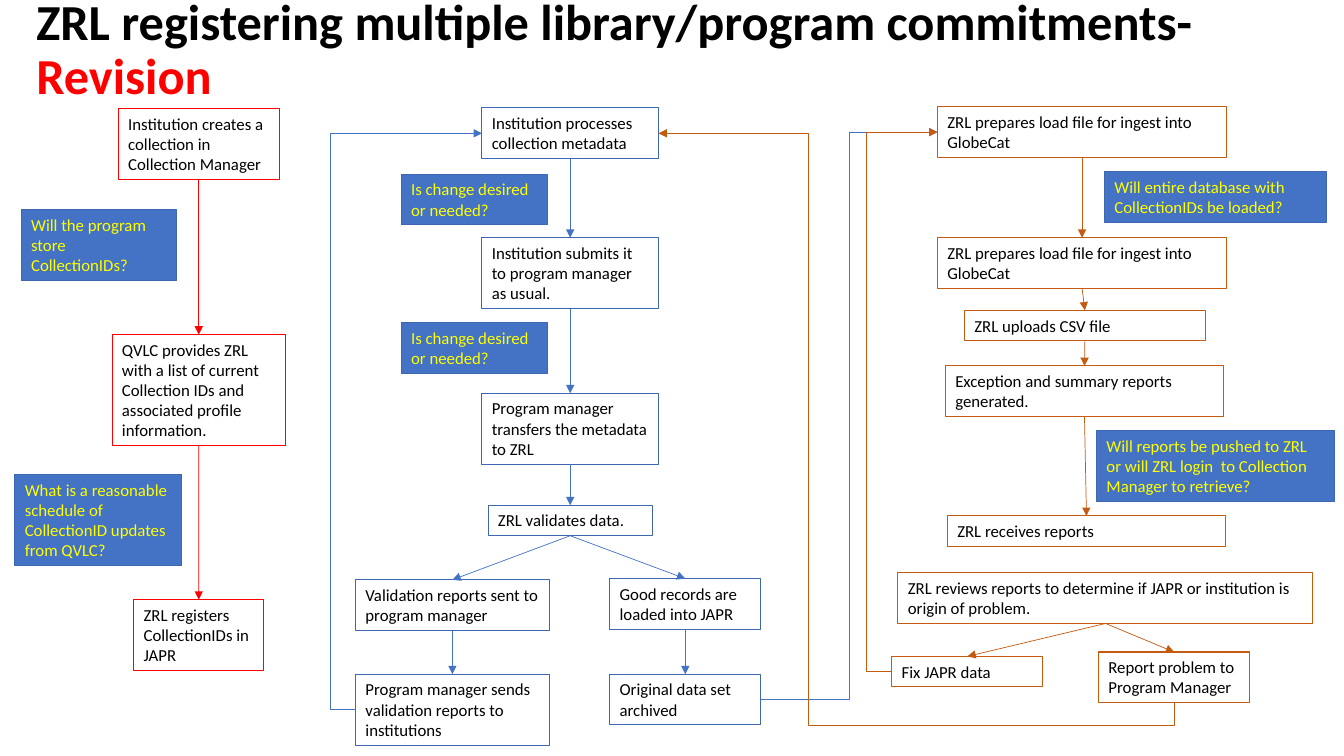
from pptx import Presentation
from pptx.dml.color import RGBColor
from pptx.enum.shapes import MSO_CONNECTOR, MSO_SHAPE
from pptx.enum.text import MSO_ANCHOR, MSO_AUTO_SIZE, PP_ALIGN
from pptx.oxml.ns import qn
from pptx.util import Cm, Pt
from lxml.etree import SubElement

FONT = "Calibri"
COLORS = {
    "black": "000000", "red": "FF0000", "yellow": "FFFF00", "border": "3E67B2",
    "blue": "4472C4", "orange": "C55A11",
}
TOP, LEFT, BOTTOM, RIGHT = range(4)

# Steps by line colour: name -> (centre x, top, width in cm, text lines, text)
STEPS = {
    "red": {
        "create": (5.01, 2.74, 4.06, 3, "Institution creates a collection in Collection Manager"),
        "provide": (5.01, 8.43, 4.37, 5, "QVLC provides ZRL with a list of current Collection IDs "
                    "and associated profile information."),
        "register": (5.01, 15.11, 3.28, 3, "ZRL registers CollectionIDs in JAPR"),
    },
    "border": {
        "process": (14.37, 2.72, 4.45, 2, "Institution processes collection metadata"),
        "submit": (14.37, 5.99, 4.45, 3, "Institution submits it to program manager as usual."),
        "transfer": (14.37, 9.91, 4.45, 3, "Program manager transfers the metadata to ZRL"),
        "validate": (14.37, 12.73, 4.14, 1, "ZRL validates data."),
        "reports sent": (11.4, 14.61, 4.88, 2, "Validation reports sent to program manager"),
        "good records": (17.27, 14.58, 3.81, 2, "Good records are loaded into JAPR"),
        "archive": (17.27, 16.99, 3.81, 2, "Original data set archived"),
        "return reports": (11.4, 16.99, 4.88, 3,
                           "Program manager sends validation reports to institutions"),
    },
    "orange": {
        "prepare": (27.27, 2.69, 7.29, 2, "ZRL prepares load file for ingest into GlobeCat"),
        "prepare again": (27.27, 5.99, 7.29, 2, "ZRL prepares load file for ingest into GlobeCat"),
        "upload": (27.34, 7.82, 6.07, 1, "ZRL uploads CSV file"),
        "summary": (27.33, 9.22, 7.01, 2, "Exception and summary reports generated."),
        "receive": (27.38, 13, 7.01, 1, "ZRL receives reports"),
        "review": (27.86, 14.43, 10.46, 2, "ZRL reviews reports to determine if JAPR or institution "
                   "is origin of problem."),
        "fix": (24.38, 16.54, 3.81, 1, "Fix JAPR data"),
        "report problem": (29.59, 16.43, 3.81, 2, "Report problem to Program Manager"),
    },
}

# Open questions, laid out like the steps
QUESTIONS = [
    (2.49, 5.28, 3.91, 3, "Will the program store CollectionIDs?"),
    (2.47, 11.96, 4.19, 4, "What is a reasonable schedule of  CollectionID updates from QVLC?"),
    (11.95, 4.39, 3.68, 2, "Is change desired or needed?"),
    (11.95, 8.13, 3.68, 2, "Is change desired or needed?"),
    (30.63, 4.32, 5.59, 2, "Will entire database with CollectionIDs be loaded?"),
    (30.63, 10.85, 5.99, 3, "Will reports be pushed to ZRL or will ZRL login  to "
     "Collection Manager to retrieve?"),
]

# Straight arrows run down each chain, from bottom to top of the next step
CHAINS = [
    ("red", ["create", "provide", "register"]),
    ("blue", ["process", "submit", "transfer", "validate", "reports sent", "return reports"]),
    ("blue", ["validate", "good records", "archive"]),
    ("orange", ["prepare", "prepare again", "upload", "summary", "receive"]),
    ("orange", ["review", "fix"]),
    ("orange", ["review", "report problem"]),
]


def rgb(name):
    return RGBColor.from_string(COLORS[name])


def add_run(paragraph, text, size, color, bold=False):
    run = paragraph.add_run()
    run.text = text
    font = run.font
    font.name, font.size, font.bold = FONT, Pt(size), bold
    font.color.rgb = rgb(color)


def add_title(slide):
    title = slide.shapes.title
    title.left, title.top, title.width, title.height = Cm(0.66), Cm(0.46), Cm(32.56), Cm(1.65)
    frame = title.text_frame
    frame.auto_size = MSO_AUTO_SIZE.NONE
    frame.vertical_anchor = MSO_ANCHOR.MIDDLE
    paragraph = frame.paragraphs[0]
    paragraph.alignment = PP_ALIGN.LEFT
    paragraph.line_spacing = 0.9
    add_run(paragraph, "ZRL registering multiple library/program commitments-", 36, "black", True)
    add_run(paragraph, "Revision", 36, "red", True)


def add_box(slide, layout, line, text_color="black", fill=None):
    center, top, width, lines, text = layout
    height = 0.26 + 0.51 * lines
    shape = slide.shapes.add_shape(
        MSO_SHAPE.RECTANGLE, Cm(center - width / 2), Cm(top), Cm(width), Cm(height))
    shape.shadow.inherit = False
    if fill:
        shape.fill.solid()
        shape.fill.fore_color.rgb = rgb(fill)
    else:
        shape.fill.background()
    shape.line.color.rgb = rgb(line)
    shape.line.width = Pt(0.75)
    frame = shape.text_frame
    frame.word_wrap = True
    frame.auto_size = MSO_AUTO_SIZE.SHAPE_TO_FIT_TEXT
    frame.vertical_anchor = MSO_ANCHOR.TOP
    paragraph = frame.paragraphs[0]
    paragraph.alignment = PP_ALIGN.LEFT
    add_run(paragraph, text, 12, text_color)
    return shape


def add_arrow(slide, start, end, color, kind=MSO_CONNECTOR.STRAIGHT, arrow_at="tailEnd"):
    connector = slide.shapes.add_connector(kind, 0, 0, 0, 0)
    connector.begin_connect(*start)
    connector.end_connect(*end)
    connector.line.color.rgb = rgb(color)
    connector.line.width = Pt(0.5)
    properties = connector.element.spPr
    SubElement(properties.find(qn("a:ln")), qn(f"a:{arrow_at}"), type="triangle")
    SubElement(properties, qn("a:effectLst"))
    return connector


def add_elbow(slide, start, end, color, bends, preset="bentConnector3", arrow_at="tailEnd"):
    """Bends are fractions of the connector's width and height."""
    connector = add_arrow(slide, start, end, color, MSO_CONNECTOR.ELBOW, arrow_at)
    geometry = connector.element.spPr.find(qn("a:prstGeom"))
    geometry.set("prst", preset)
    guides = geometry.find(qn("a:avLst"))
    if guides is None:
        guides = SubElement(geometry, qn("a:avLst"))
    for number, bend in enumerate(bends, 1):
        SubElement(guides, qn("a:gd"), name=f"adj{number}", fmla=f"val {round(bend * 100000)}")


def main():
    presentation = Presentation()
    presentation.slide_width, presentation.slide_height = Cm(33.87), Cm(19.05)
    slide = presentation.slides.add_slide(presentation.slide_layouts[5])
    add_title(slide)

    # Steps and questions
    steps = {name: add_box(slide, layout, line)
             for line, group in STEPS.items() for name, layout in group.items()}
    for layout in QUESTIONS:
        add_box(slide, layout, "border", "yellow", "blue")

    # Straight arrows
    for color, chain in CHAINS:
        for source, target in zip(chain, chain[1:]):
            add_arrow(slide, (steps[source], BOTTOM), (steps[target], TOP), color)

    # Loops between columns
    add_elbow(slide, (steps["return reports"], LEFT), (steps["process"], LEFT), "blue", [-0.2])
    add_elbow(slide, (steps["archive"], RIGHT), (steps["prepare"], LEFT), "blue", [0.5])
    add_elbow(slide, (steps["fix"], LEFT), (steps["prepare"], LEFT), "orange", [-0.55])
    add_elbow(slide, (steps["process"], RIGHT), (steps["report problem"], BOTTOM), "orange",
              [0.29, 1.04], "bentConnector4", "headEnd")

    presentation.save("out.pptx")


if __name__ == "__main__":
    main()
